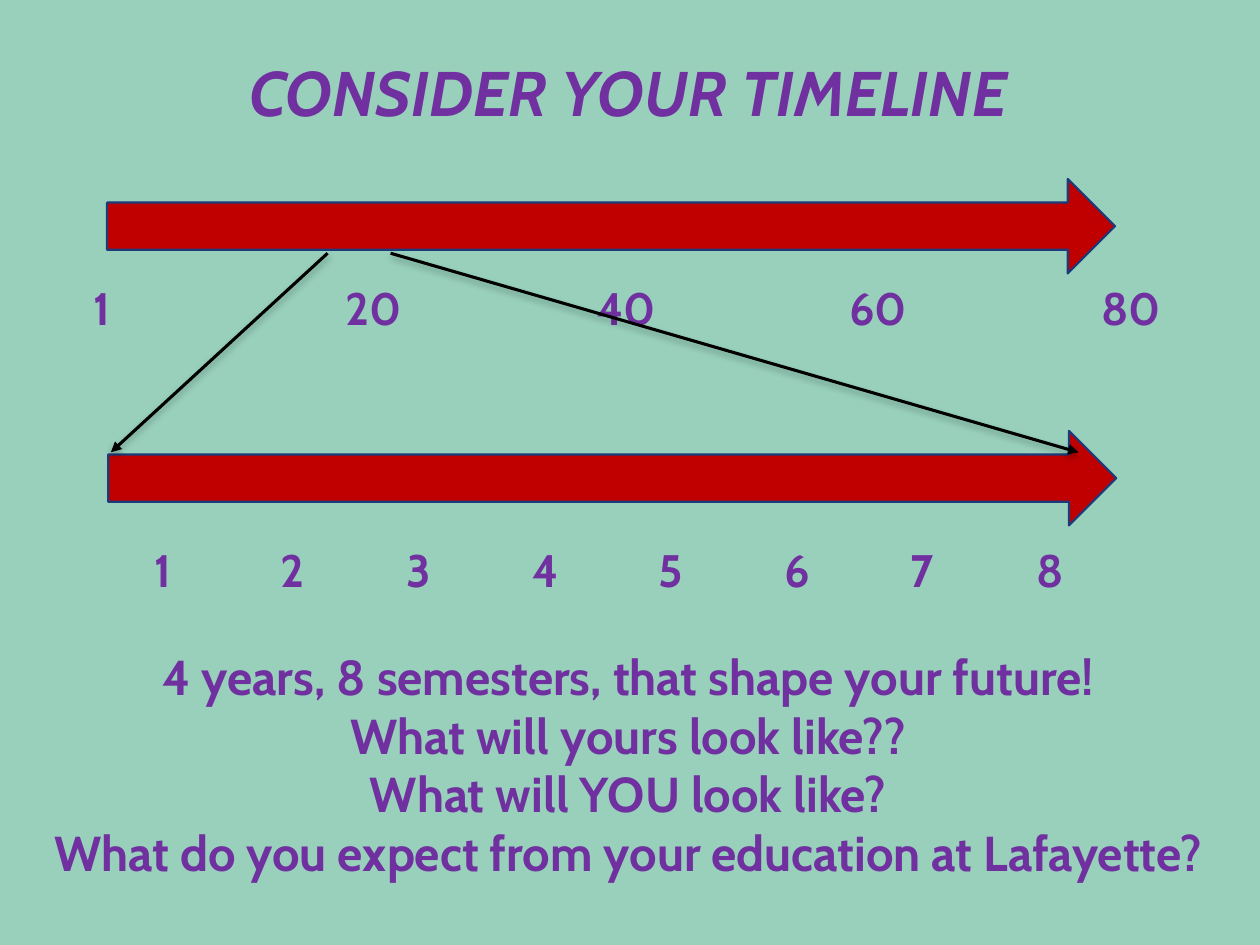
"""Builds the "Consider your timeline" slide."""
import pptx
import pptx.util
import pptx.dml.color
import pptx.enum.shapes
import pptx.enum.text
import pptx.oxml
import pptx.oxml.ns

Inches, Pt = pptx.util.Inches, pptx.util.Pt
ALIGN = pptx.enum.text.PP_ALIGN
ANCHOR = pptx.enum.text.MSO_ANCHOR
NS = pptx.oxml.ns.nsdecls("a")

COLORS = {"background": "98D0BC", "text": "7030A0", "bar": "C00000",
          "outline": "1D3A79", "pointer": "000000"}
FONT = "Cabin"

TITLE = "CONSIDER YOUR TIMELINE"
QUESTIONS = [
    "4 years, 8 semesters, that shape your future!",
    "What will yours look like??",
    "What will YOU look like?",
    "What do you expect from your education at Lafayette?",
]
SCALES = [
    {"box": (1.13, 4.25, 7.43, 0.98), "step": 1,
     "labels": ["1", "2", "3", "4", "5", "6", "7", "8"]},
    {"box": (0.64, 2.17, 8.75, 0.54), "step": 2,
     "labels": ["1", "20", "40", "60", "80"]},
]
BARS = [(0.85, 1.42), (0.86, 3.42)]
BAR_SIZE = (8, 0.75)
POINTERS = [(2.6, 0.88), (3.1, 8.56)]
POINTER_TOP, POINTER_BOTTOM = 2.01, 3.59


def rgb(name):
    return pptx.dml.color.RGBColor.from_string(COLORS[name])


def add_text(s, box, lines, size, align=ALIGN.LEFT, anchor=ANCHOR.TOP,
             italic=None, spacing=None):
    tf = s.shapes.add_textbox(*map(Inches, box)).text_frame
    tf.word_wrap = True
    tf.vertical_anchor = anchor
    for i, line in enumerate(lines):
        p = tf.add_paragraph() if i else tf.paragraphs[0]
        p.alignment = align
        p.line_spacing = spacing
        r = p.add_run()
        r.text = line
        r.font.name, r.font.size = FONT, Pt(size)
        r.font.bold, r.font.italic = True, italic
        r.font.color.rgb = rgb("text")
    return tf


def add_scale(s, box, step, labels):
    tf = add_text(s, box, ["\t".join(labels)], 26)
    stops = "".join(f'<a:tab pos="{Inches(step * n)}" algn="l"/>'
                    for n in range(1, len(labels)))
    tf.paragraphs[0]._p.get_or_add_pPr().append(
        pptx.oxml.parse_xml(f"<a:tabLst {NS}>{stops}</a:tabLst>"))


def add_bar(s, left, top):
    sp = s.shapes.add_shape(pptx.enum.shapes.MSO_SHAPE.RIGHT_ARROW,
                            *map(Inches, (left, top) + BAR_SIZE))
    sp.shadow.inherit = False
    sp.fill.solid()
    sp.fill.fore_color.rgb = rgb("bar")
    sp.line.color.rgb = rgb("outline")
    sp.line.width = Pt(1.25)


def add_pointer(s, start, end):
    line = s.shapes.add_connector(
        pptx.enum.shapes.MSO_CONNECTOR.STRAIGHT,
        *map(Inches, (start, POINTER_TOP, end, POINTER_BOTTOM)))
    line.line.color.rgb = rgb("pointer")
    line.line.width = Pt(1.75)
    line.line._get_or_add_ln().append(
        pptx.oxml.parse_xml(f'<a:tailEnd {NS} type="triangle"/>'))
    line._element.spPr.append(pptx.oxml.parse_xml(
        f'<a:effectLst {NS}><a:outerShdw blurRad="{Pt(4)}" dist="{Pt(2)}" '
        f'dir="5400000" rotWithShape="0"><a:srgbClr val="{COLORS["pointer"]}">'
        '<a:alpha val="28000"/></a:srgbClr></a:outerShdw></a:effectLst>'))


def main():
    prs = pptx.Presentation()
    prs.slide_width, prs.slide_height = Inches(10), Inches(7.5)
    s = prs.slides.add_slide(prs.slide_layouts[6])
    s.background.fill.solid()
    s.background.fill.fore_color.rgb = rgb("background")

    add_text(s, (0.88, 0.31, 8.21, 0.91), [TITLE], 36, ALIGN.CENTER,
             ANCHOR.MIDDLE, italic=True, spacing=0.9)
    add_text(s, (0.15, 5.08, 9.67, 1.99), QUESTIONS, 28, ALIGN.CENTER)
    for scale in SCALES:
        add_scale(s, **scale)
    for left, top in BARS:
        add_bar(s, left, top)
    for start, end in POINTERS:
        add_pointer(s, start, end)
    prs.save("out.pptx")


if __name__ == "__main__":
    main()
